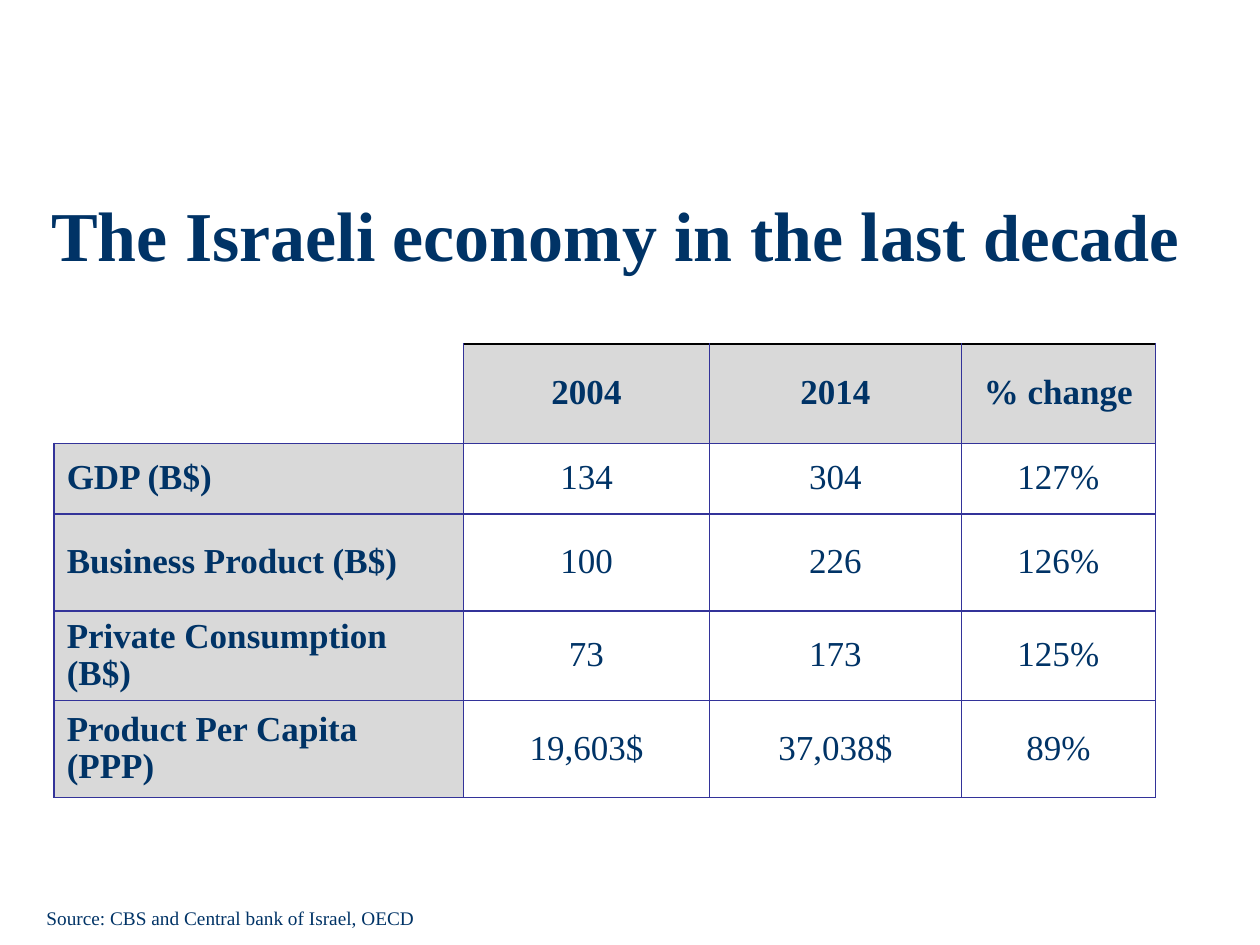
"""Build a slide comparing Israeli economic indicators in 2004 and 2014."""
from dataclasses import dataclass

from lxml import etree
from pptx import Presentation
from pptx.dml.color import RGBColor
from pptx.enum.text import MSO_ANCHOR, PP_ALIGN
from pptx.oxml.ns import qn
from pptx.util import Inches, Pt

MIDDLE, TOP = MSO_ANCHOR.MIDDLE, MSO_ANCHOR.TOP
LEFT, CENTER = PP_ALIGN.LEFT, PP_ALIGN.CENTER
FONT = "Times New Roman"
NAVY, GRID, BLACK, GRAY, WHITE = "003366", "333399", "000000", "D9D9D9", "FFFFFF"


@dataclass(frozen=True)
class Indicator:
    label: str
    before: str
    after: str
    change: str
    height: float


HEADER = Indicator("", "2004", "2014", "% change", 0.79)
INDICATORS = [
    Indicator("GDP (B$)", "134", "304", "127%", 0.56),
    Indicator("Business Product (B$)", "100", "226", "126%", 0.77),
    Indicator("Private Consumption (B$)", "73", "173", "125%", 0.71),
    Indicator("Product Per Capita (PPP)", "19,603$", "37,038$", "89%", 0.77),
]
COLUMN_WIDTHS = [3.25, 1.95, 2, 1.54]


def color(value: str) -> RGBColor:
    return RGBColor.from_string(value)


def style_paragraph(paragraph, size: float, bold: bool, align) -> None:
    paragraph.alignment = align
    paragraph.font.name = FONT
    paragraph.font.size = Pt(size)
    paragraph.font.bold = bold
    paragraph.font.color.rgb = color(NAVY)


def add_border(cell, side: str, value: str) -> None:
    properties = cell._tc.get_or_add_tcPr()
    line = etree.SubElement(properties, qn(f"a:ln{side}"), w=str(Pt(1)))
    fill = etree.SubElement(line, qn("a:solidFill"))
    etree.SubElement(fill, qn("a:srgbClr"), val=value)


def fill_cell(cell, text: str, row: int, column: int) -> None:
    is_label = column == 0
    is_heading = row == 0 or is_label
    is_corner = row == 0 and is_label
    for side in "RB" if is_corner else "LRTB":
        add_border(cell, side, BLACK if row == 0 and side == "T" else GRID)
    if is_corner:
        cell.fill.background()
        return
    cell.fill.solid()
    cell.fill.fore_color.rgb = color(GRAY if is_heading else WHITE)
    cell.vertical_anchor = MIDDLE
    if is_label:
        cell.margin_right = Inches(0.15)
    cell.text = text
    paragraph = cell.text_frame.paragraphs[0]
    style_paragraph(paragraph, 20, is_heading, LEFT if is_label else CENTER)
    paragraph.line_spacing = 0.95


def add_indicator_table(slide, left: float, top: float) -> None:
    rows = [HEADER, *INDICATORS]
    table = slide.shapes.add_table(
        len(rows), len(COLUMN_WIDTHS), Inches(left), Inches(top),
        Inches(sum(COLUMN_WIDTHS)), Inches(sum(row.height for row in rows)),
    ).table
    table.first_row = table.horz_banding = False
    for column, width in zip(table.columns, COLUMN_WIDTHS):
        column.width = Inches(width)
    for r, indicator in enumerate(rows):
        table.rows[r].height = Inches(indicator.height)
        values = (indicator.label, indicator.before, indicator.after, indicator.change)
        for c, value in enumerate(values):
            fill_cell(table.cell(r, c), value, r, c)


def add_text(slide, left: float, top: float, width: float, height: float,
             anchor, size: float, bold: bool, align):
    frame = slide.shapes.add_textbox(
        Inches(left), Inches(top), Inches(width), Inches(height)).text_frame
    frame.word_wrap = True
    frame.vertical_anchor = anchor
    paragraph = frame.paragraphs[0]
    style_paragraph(paragraph, size, bold, align)
    return paragraph


def main() -> None:
    deck = Presentation()
    deck.slide_width, deck.slide_height = Inches(10), Inches(7.5)
    slide = deck.slides.add_slide(deck.slide_layouts[6])
    add_indicator_table(slide, 0.43, 2.73)

    title = add_text(slide, 0, 1.23, 9.77, 1.25, MIDDLE, 40, True, CENTER)
    title.add_run().text = "The Israeli economy in the last "
    decade = title.add_run()
    decade.text = "decade"
    decade.font.size = Pt(38)

    source = add_text(slide, 0.27, 7.14, 7.25, 0.29, TOP, 11, False, LEFT)
    source.add_run().text = "Source: CBS and Central bank of Israel, OECD"
    deck.save("out.pptx")


if __name__ == "__main__":
    main()
